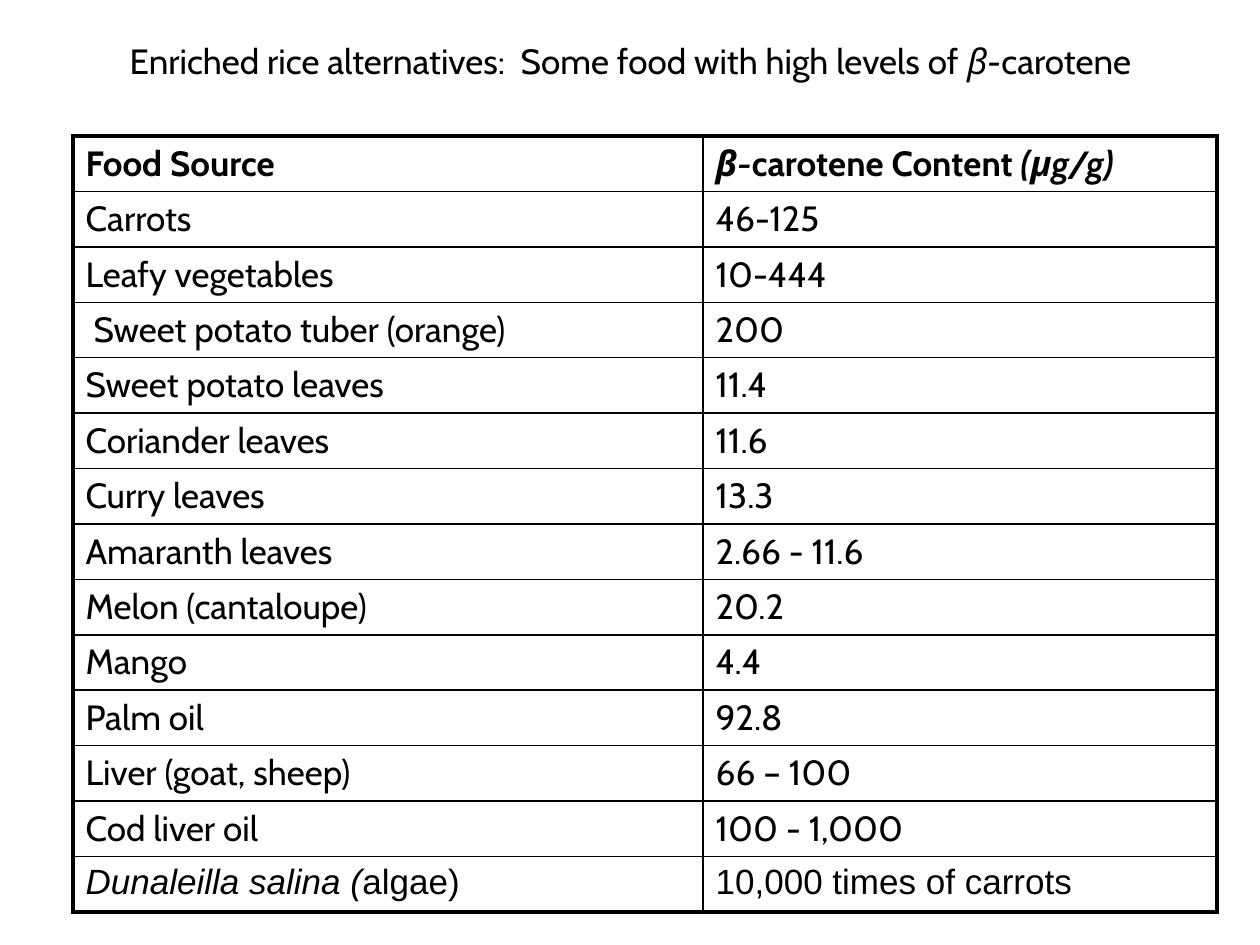
from lxml.etree import SubElement
from pptx import Presentation
from pptx.dml.color import RGBColor as Rgb
from pptx.enum.text import MSO_ANCHOR as Anchor, PP_ALIGN as Align
from pptx.oxml.ns import qn
from pptx.util import Inches, Pt

COLORS = {"ink": "000000", "paper": "FFFFFF"}
FONT, ALT = "Cabin", "Arial"
SIZE = 20
THIN, THICK = 1, 2.25
COLS = [5, 4.08]
ROW = 0.44

# Each text is a list of runs; every second run is italic.
TITLE = ["Enriched rice alternatives:  Some food with high levels of ",
         "β-", "carotene "]
HEAD = [["Food Source"], ["", "β-", "carotene Content", " (μg/g)"]]
FOODS = [
    ("Carrots", "46-125"),
    ("Leafy vegetables", "10-444"),
    (" Sweet potato tuber (orange)", "200"),
    ("Sweet potato leaves", "11.4"),
    ("Coriander leaves", "11.6"),
    ("Curry leaves", "13.3"),
    ("Amaranth leaves", "2.66 - 11.6"),
    ("Melon (cantaloupe)", "20.2"),
    ("Mango", "4.4"),
    ("Palm oil", "92.8"),
    ("Liver (goat, sheep)", "66 – 100"),
    ("Cod liver oil", "100 - 1,000"),
]
ALGAE = [["", "Dunaleilla salina (", "algae)"], ["10,000 times of carrots"]]


def write(para, parts, font=FONT, bold=False):
    """Fill a paragraph with runs that alternate upright and italic."""
    for i, part in enumerate(parts):
        if not part:
            continue
        run = para.add_run()
        run.text = part
        face = run.font
        face.name, face.size = font, Pt(SIZE)
        face.bold, face.italic = bold, i % 2 == 1
        face.color.rgb = Rgb.from_string(COLORS["ink"])


def add_title(slide):
    title = slide.shapes.title
    title.left, title.top = Inches(0.4), Inches(0.17)
    title.width, title.height = Inches(9.27), Inches(0.67)
    frame = title.text_frame
    frame.vertical_anchor = Anchor.MIDDLE
    para = frame.paragraphs[0]
    para.alignment = Align.CENTER
    para.line_spacing = 0.85
    write(para, TITLE)


def add_edges(cell, widths):
    """Draw cell borders; widths maps L, R, T and B to points."""
    props = cell._tc.get_or_add_tcPr()
    for i, (side, width) in enumerate(widths.items()):
        line = SubElement(props, qn(f"a:ln{side}"), w=str(Pt(width)))
        fill = SubElement(line, qn("a:solidFill"))
        SubElement(fill, qn("a:srgbClr"), val=COLORS["ink"])
        props.insert(i, line)  # borders come before the cell fill


def add_table(slide, rows):
    last = len(rows) - 1
    table = slide.shapes.add_table(
        len(rows), len(COLS), Inches(0.58), Inches(1.08),
        Inches(sum(COLS)), Inches(ROW * len(rows))).table
    for col, width in zip(table.columns, COLS):
        col.width = Inches(width)
    for r, row in enumerate(rows):
        table.rows[r].height = Inches(ROW)
        for c, parts in enumerate(row):
            cell = table.cell(r, c)
            cell.fill.solid()
            cell.fill.fore_color.rgb = Rgb.from_string(COLORS["paper"])
            para = cell.text_frame.paragraphs[0]
            para.space_before = Pt(SIZE * 0.2)
            write(para, parts, ALT if r == last else FONT, r == 0)
            outer = {"L": c == 0, "R": c == len(COLS) - 1,
                     "T": r == 0, "B": r == last}
            add_edges(cell, {side: THICK if out else THIN
                             for side, out in outer.items()})


def main():
    deck = Presentation()
    deck.slide_width, deck.slide_height = Inches(10), Inches(7.5)
    slide = deck.slides.add_slide(deck.slide_layouts[5])
    add_title(slide)
    foods = [[[name], [level]] for name, level in FOODS]
    add_table(slide, [HEAD, *foods, ALGAE])
    deck.save("out.pptx")


if __name__ == "__main__":
    main()
